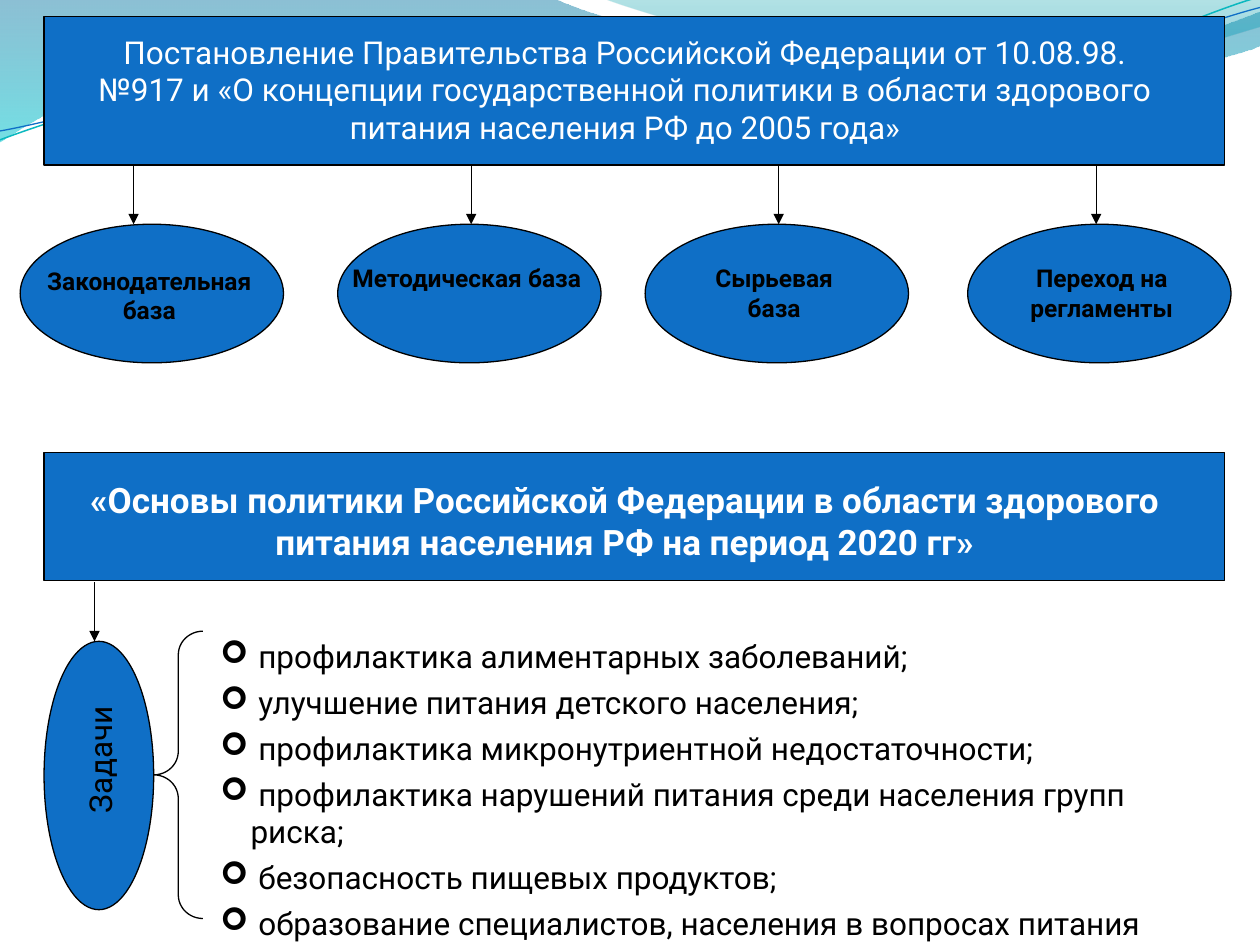
import math
import pptx
import pptx.util
import pptx.dml.color
import pptx.enum.shapes
import pptx.enum.text
import pptx.oxml
import pptx.oxml.ns
import lxml.etree

Inches, Pt = pptx.util.Inches, pptx.util.Pt
Shape = pptx.enum.shapes.MSO_SHAPE
Align = pptx.enum.text.PP_ALIGN
qn = pptx.oxml.ns.qn

# Content
DECREE = ("Постановление Правительства Российской Федерации от 10.08.98. №917 и "
          "«О концепции государственной политики в области здорового питания "
          "населения РФ до 2005 года»")
POLICY = ("«Основы политики Российской Федерации в области здорового питания "
          "населения РФ на период 2020 гг»")
# Each base: oval left, arrow x, text left, text top, paragraphs
BASES = [
    (0.16, 1.06, 0.20, 2.10, ["Законодательная база"]),
    (2.68, 3.74, 2.72, 2.08, ["Методическая база"]),
    (5.12, 6.18, 5.16, 2.08, ["Сырьевая", "база"]),
    (7.68, 8.70, 7.76, 2.08, ["Переход на регламенты"]),
]
TASKS = [
    " профилактика алиментарных заболеваний;",
    " улучшение питания детского населения;",
    " профилактика микронутриентной недостаточности;",
    " профилактика нарушений питания среди населения групп риска;",
    " безопасность пищевых продуктов;",
    " образование специалистов, населения в вопросах питания",
]

THEME = dict(font="Roboto", blue="0F6FC6", ink="000000", white="FFFFFF", teal="0AB8BF",
             small=14, body=18, head=20, line=0.75)

# Waves: start point, then line ends (2 numbers) or cubic curves (6 numbers)
BANDS = [
    ((0, -0.01), [(4.4, -0.01), (4.76, 0.17, 6.64, 0.63, 7.58, 0.63),
                  (8.53, 0.63, 9.58, 0.26, 10, 0.09), (10.01, 0.36),
                  (9.83, 0.44, 8.7, 0.76, 7.46, 0.75),
                  (6.22, 0.75, 3.82, 0.28, 2.57, 0.34),
                  (1.29, 0.35, 0.46, 0.83, -0.01, 1.13), (0, -0.01)],
     [(0, "0074A1", 45), (1, "00C6CF", 55)]),
    ((4.79, -0.01), [(5.09, 0.11, 6.82, 0.62, 7.69, 0.65),
                     (8.56, 0.69, 9.61, 0.32, 10, 0.21), (10, 0), (4.79, -0.01)],
     [(0, "00A1A9", 30), (0.8, "008BBF", 45)]),
]
TILT = 357.3
# Strands: start, curves, centre of the tilt, colour, width
STRANDS = [
    ((0, 1.11), [(0.48, 0.93, 1.58, 0.57, 2.77, 0.52),
                 (3.95, 0.47, 5.93, 0.89, 7.13, 0.8),
                 (8.33, 0.71, 9.38, 0.15, 9.98, -0.02)], (4.99, 0.58), THEME["teal"], 0.85),
    ((0, 1.04), [(0.47, 0.96, 1.64, 0.61, 2.83, 0.56),
                 (4.03, 0.51, 5.97, 0.83, 7.17, 0.75),
                 (8.36, 0.67, 9.41, 0.21, 10, 0.06)], (5, 0.59), THEME["blue"], 0.75),
]

deck = pptx.Presentation()
deck.slide_width, deck.slide_height = Inches(10), Inches(7.5)
slide = deck.slides.add_slide(deck.slide_layouts[6])
shapes = slide.shapes


def rgb(code):
    return pptx.dml.color.RGBColor.from_string(code)


def stroke(item, color=THEME["ink"], width=THEME["line"]):
    item.line.color.rgb = rgb(color)
    item.line.width = Pt(width)


def level(dot, hub):
    """Turn a point back about the hub, so that the tilt restores it."""
    turn = math.radians(-TILT)
    dx, dy = dot[0] - hub[0], dot[1] - hub[1]
    return (hub[0] + dx * math.cos(turn) - dy * math.sin(turn),
            hub[1] + dx * math.sin(turn) + dy * math.cos(turn))


def trace(start, steps, hub=None):
    """Build an outline of lines and cubic curves; a hub makes it tilted and open."""
    dots = [start] + [step[k:k + 2] for step in steps for k in range(0, len(step), 2)]
    if hub:
        dots = [level(dot, hub) for dot in dots]
    dots = [(Inches(x), Inches(y)) for x, y in dots]
    pen = shapes.build_freeform(*dots[0])
    pen.add_line_segments(dots[1:], close=not hub)
    item = pen.convert_to_shape()
    item.shadow.inherit = False
    item.rotation = TILT if hub else 0
    # Join the three points of each curve
    legs = iter(list(item._element.spPr.iter(qn("a:lnTo"))))
    for step in steps:
        leg = next(legs)
        if len(step) == 6:
            curve = lxml.etree.Element(qn("a:cubicBezTo"))
            leg.addprevious(curve)
            for part in (leg, next(legs), next(legs)):
                curve.append(part[0])
                part.getparent().remove(part)
    return item


def block(kind, box, fill=THEME["blue"]):
    item = shapes.add_shape(kind, *map(Inches, box))
    item.shadow.inherit = False
    if fill:
        item.fill.solid()
        item.fill.fore_color.rgb = rgb(fill)
    else:
        item.fill.background()
    stroke(item)
    return item


def arrow(x, top, end):
    item = shapes.add_connector(pptx.enum.shapes.MSO_CONNECTOR.STRAIGHT,
                                Inches(x), Inches(top), Inches(x), Inches(end))
    stroke(item)
    lxml.etree.SubElement(item.line._get_or_add_ln(), qn("a:tailEnd"), type="triangle")
    lxml.etree.SubElement(item._element.spPr, qn("a:effectLst"))


def write(lines, box, size=THEME["body"], color=THEME["ink"], bold=False,
          align=Align.CENTER, inset=(0.1, 0.05), turn=0, bullet=None, gap=0):
    item = shapes.add_textbox(*map(Inches, box))
    item.rotation = turn
    frame = item.text_frame
    frame.word_wrap = True
    frame.auto_size = pptx.enum.text.MSO_AUTO_SIZE.SHAPE_TO_FIT_TEXT
    frame.margin_left = frame.margin_right = Inches(inset[0])
    frame.margin_top = frame.margin_bottom = Inches(inset[1])
    for n, line in enumerate(lines):
        para = frame.add_paragraph() if n else frame.paragraphs[0]
        para.alignment = align
        if n and gap:
            para.space_before = Pt(gap)
        if bullet:
            props = para._p.get_or_add_pPr()
            props.set("marL", str(Inches(0.24)))
            props.set("indent", str(-Inches(0.24)))
            lxml.etree.SubElement(props, qn("a:buFont"), typeface="Wingdings", charset="2")
            lxml.etree.SubElement(props, qn("a:buChar"), char=bullet)
        run = para.add_run()
        run.text = line
        run.font.name, run.font.size, run.font.bold = THEME["font"], Pt(size), bold
        run.font.color.rgb = rgb(color)


# Background waves
for start, steps, stops in BANDS:
    band = trace(start, steps)
    band.line.fill.background()
    band.fill.gradient()
    band.fill.gradient_angle = 270
    for stop, (place, color, _) in zip(band.fill.gradient_stops, stops):
        stop.position = place
        stop.color.rgb = rgb(color)
    for node, (_, _, alpha) in zip(band._element.spPr.iter(qn("a:srgbClr")), stops):
        lxml.etree.SubElement(node, qn("a:alpha"), val=str(alpha * 1000))
for start, steps, hub, color, width in STRANDS:
    strand = trace(start, steps, hub)
    strand.fill.background()
    stroke(strand, color, width)

# Decree and its four bases
block(Shape.RECTANGLE, (0.35, 0.13, 9.37, 1.18))
write([DECREE], (0.59, 0.21, 8.74, 1), color=THEME["white"])
for left, mid, edge, top, lines in BASES:
    block(Shape.OVAL, (left, 1.78, 2.09, 1.1))
    arrow(mid, 1.31, 1.78)
    write(lines, (edge, top, 1.97, 0.49), size=THEME["small"], bold=True, inset=(0.02, 0.01))

# Policy and its tasks
block(Shape.RECTANGLE, (0.35, 3.59, 9.37, 1.02))
write([POLICY], (0.59, 3.75, 8.74, 0.77), size=THEME["head"], color=THEME["white"], bold=True)
block(Shape.OVAL, (0.35, 5.09, 0.87, 2.13))
write(["Задачи"], (0, 5.83, 1.58, 0.4), turn=270)
write(TASKS, (1.65, 5.01, 8.15, 2.28), align=Align.LEFT, bullet="➢", gap=4.5)
brace = block(Shape.LEFT_BRACE, (1.22, 5.01, 0.39, 2.28), fill=None)
brace.adjustments[0], brace.adjustments[1] = 0.48, 0.5
arrow(0.75, 4.62, 5.09)

deck.save("out.pptx")
